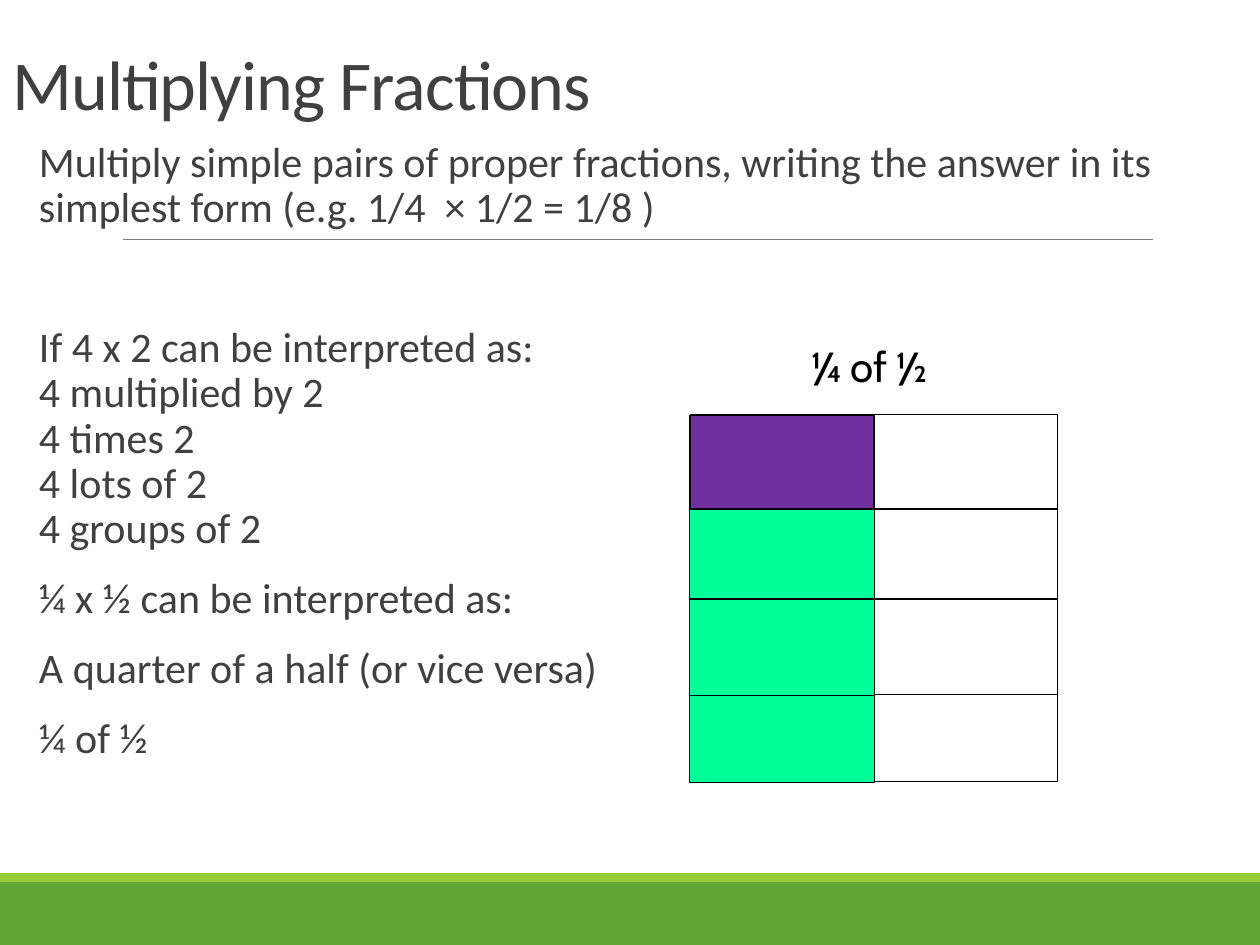
from lxml import etree
from pptx import Presentation
from pptx.dml.color import RGBColor
from pptx.enum.shapes import MSO_CONNECTOR, MSO_SHAPE
from pptx.enum.text import MSO_ANCHOR
from pptx.oxml.ns import qn
from pptx.util import Pt

RECTANGLE = MSO_SHAPE.RECTANGLE
STRAIGHT = MSO_CONNECTOR.STRAIGHT
TOP, BOTTOM = MSO_ANCHOR.TOP, MSO_ANCHOR.BOTTOM
LEFT_SIDE, RIGHT_SIDE = 1, 3

COLOURS = {
    "band": "63A537",
    "stripe": "99CB38",
    "rule": "808080",
    "text": "404040",
    "black": "000000",
    "half": "00FF99",
    "quarter": "7030A0",
}

TITLE_FONT = {"name": "Calibri", "size": Pt(40)}
BODY_FONT = {"name": "Calibri", "size": Pt(24)}
LABEL_FONT = {"name": "Cabin", "size": Pt(24)}

# Each paragraph with the space before it
BODY = [
    ("Multiply simple pairs of proper fractions, writing the answer in its "
     "simplest form (e.g. 1/4  × 1/2 = 1/8 )", 0),
    ("If 4 x 2 can be interpreted as:\n4 multiplied by 2\n4 times 2\n"
     "4 lots of 2\n4 groups of 2", 52),
    ("¼ x ½ can be interpreted as:", 12),
    ("A quarter of a half (or vice versa)", 12),
    ("¼ of ½", 12),
]


def colour(name):
    return RGBColor.from_string(COLOURS[name])


def set_values(target, values):
    for name, value in values.items():
        setattr(target, name, value)


def add_rectangle(page, box, fill=None, line=None):
    shape = page.shapes.add_shape(RECTANGLE, *map(Pt, box))
    shape.shadow.inherit = False
    if fill:
        shape.fill.solid()
        shape.fill.fore_color.rgb = colour(fill)
    else:
        shape.fill.background()
    if line:
        shape.line.color.rgb = colour(line)
        shape.line.width = Pt(0.75)
    else:
        shape.line.fill.background()
    return shape


def add_line(page, left, right, y, line="black", width=0.75):
    connector = page.shapes.add_connector(STRAIGHT, Pt(left), Pt(y), Pt(right), Pt(y))
    connector.line.color.rgb = colour(line)
    connector.line.width = Pt(width)
    etree.SubElement(connector._element.spPr, qn("a:effectLst"))
    return connector


def add_text(page, box, paragraphs, font, ink, frame_format, para_format):
    frame = page.shapes.add_textbox(*map(Pt, box)).text_frame
    set_values(frame, {"word_wrap": True, **frame_format})
    for index, (text, space_before) in enumerate(paragraphs):
        para = frame.add_paragraph() if index else frame.paragraphs[0]
        para.text = text
        set_values(para, {"space_before": Pt(space_before), **para_format})
        for span in para.runs:
            set_values(span.font, font)
            span.font.color.rgb = colour(ink)
    return frame


def add_backdrop(page, box):
    left, top, width, height = box
    band_top = top + height - 36
    add_rectangle(page, (left, band_top, width, 36), "band")
    add_rectangle(page, (left, band_top - 5, width, 5), "stripe")
    add_line(page, left + 70.5, left + 659, top + 136.8, "rule", 0.5)


def add_title(page, box):
    frame = add_text(page, box, [("Multiplying Fractions", 0)], TITLE_FONT, "text",
                     {"vertical_anchor": BOTTOM}, {"line_spacing": 0.85})
    # Tighter letter spacing, in hundredths of a point
    frame.paragraphs[0].runs[0].font._element.set("spc", "-50")


def add_body(page, box):
    add_text(page, box, BODY, BODY_FONT, "text",
             {"vertical_anchor": TOP, "margin_left": 0, "margin_right": 0},
             {"line_spacing": 0.9, "space_after": Pt(2)})


def add_fraction_model(page, box):
    left, top, width, height = box
    half = 105.8
    middle = height / 2
    # Label above the square
    add_text(page, (left + 62.5, top - 46.5, 108, 36.7), [("¼ of ½", 0)],
             LABEL_FONT, "black", {}, {})

    # Whole square and its shaded half
    add_rectangle(page, (left + 0.7, top - 0.7, width, height), line="black")
    shaded = add_rectangle(page, (left, top, half, height), "half", "black")

    # Quarter lines across the shaded and the plain half
    columns = [
        (left, left + half, (52.5, middle, 159.8)),
        (left + half, left + width + 1.4, (53.3, middle, 159.1)),
    ]
    for column, (start, end, offsets) in enumerate(columns):
        for offset in offsets:
            divider = add_line(page, start, end, top + offset)
            if offset == middle:
                divider.begin_connect(shaded, RIGHT_SIDE if column else LEFT_SIDE)
                if column == 0:
                    divider.end_connect(shaded, RIGHT_SIDE)

    # A quarter of the half
    add_rectangle(page, (left + 0.7, top, 104.4, 53.3), "quarter", "black")


def main():
    deck = Presentation()
    deck.slide_width, deck.slide_height = Pt(720), Pt(540)
    page = deck.slides.add_slide(deck.slide_layouts[6])
    add_backdrop(page, (0, 0, 720, 540))
    add_title(page, (0, 0, 676, 75))
    add_body(page, (22.3, 77, 678, 90.7))
    add_fraction_model(page, (393.9, 237.6, 209.5, 209.5))
    deck.save("out.pptx")


if __name__ == "__main__":
    main()
